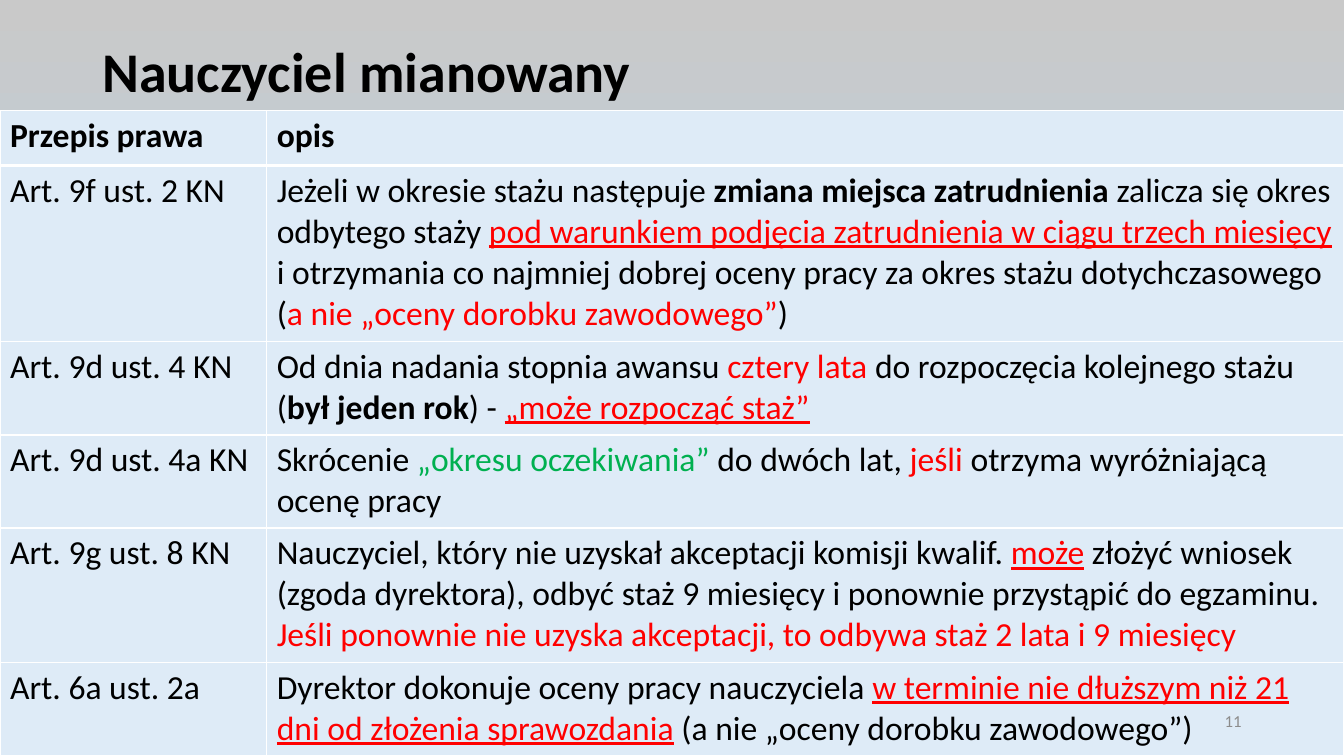
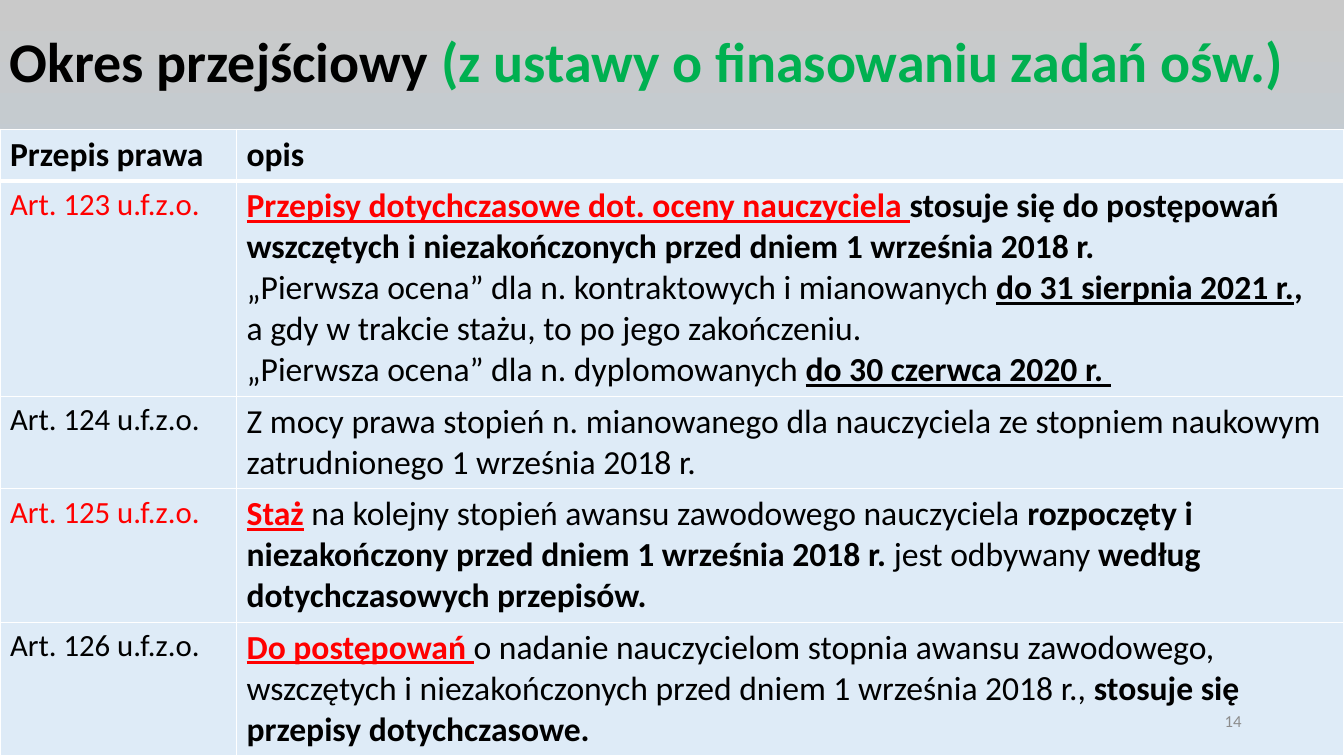
from lxml import etree
from pptx import Presentation
from pptx.dml import color as dml
from pptx.enum import text as t
from pptx.oxml import ns
from pptx.util import Pt

FONT = "Calibri"
COLORS = {"ink": "000000", "red": "FF0000", "green": "00B050",
          "cell": "DEEBF7", "border": "FFFFFF", "number": "8C8C8C"}
BACKGROUND = [(0, "C9C9C9"), (74, "B5D2EC"), (83, "B5D2EC"), (100, "CEE1F2")]
WIDTH, HEIGHT = 960, 540
HEADER = ("Przepis prawa", "opis")

# Content: a run is (text, marks); marks: b bold, u underline, r red, g green.
# A row is (provision, its marks, paragraphs of the description).
SLIDES = [
    {
        "title": [("Nauczyciel mianowany", "b")],
        "title_box": (66, 0, 828, 106.5),
        "number": "11",
        "top": 79.2,
        "first_column": 190.5,
        "provision_size": 24,
        "heights": [39, 125.5, 67, 66.5, 96, 66.8],
        "rows": [
            ("Art. 9f ust. 2 KN", "", [[
                ("Jeżeli w okresie stażu następuje ", ""),
                ("zmiana miejsca zatrudnienia ", "b"),
                ("zalicza się okres odbytego staży ", ""),
                ("pod warunkiem podjęcia zatrudnienia w ciągu trzech miesięcy ", "ru"),
                ("i otrzymania co najmniej dobrej oceny pracy za okres stażu "
                 "dotychczasowego (", ""),
                ("a nie „oceny dorobku zawodowego”", "r"),
                (")", "")]]),
            ("Art. 9d ust. 4 KN", "", [[
                ("Od dnia nadania stopnia awansu ", ""),
                ("cztery lata ", "r"),
                ("do rozpoczęcia kolejnego stażu (", ""),
                ("był jeden rok", "b"),
                (") - ", ""),
                ("„może rozpocząć staż”", "ru")]]),
            ("Art. 9d ust. 4a KN", "", [[
                ("Skrócenie ", ""),
                ("„okresu oczekiwania” ", "g"),
                ("do dwóch lat, ", ""),
                ("jeśli", "r"),
                (" otrzyma wyróżniającą ocenę pracy", "")]]),
            ("Art. 9g ust. 8 KN", "", [
                [("Nauczyciel, który nie uzyskał akceptacji komisji kwalif. ", ""),
                 ("może", "ru"),
                 (" złożyć wniosek (zgoda dyrektora), odbyć staż 9 miesięcy "
                  "i ponownie przystąpić do egzaminu.", "")],
                [("Jeśli ponownie nie uzyska akceptacji, to odbywa staż "
                  "2 lata i 9 miesięcy", "r")]]),
            ("Art. 6a ust. 2a", "", [[
                ("Dyrektor dokonuje oceny pracy nauczyciela ", ""),
                ("w terminie nie dłuższym niż 21 dni od złożenia sprawozdania", "ru"),
                (" (a nie „oceny dorobku zawodowego”)", "")]]),
        ],
    },
    {
        "title": [("Okres przejściowy ", "b"),
                  ("(z ustawy o finasowaniu zadań ośw.)", "bg")],
        "title_box": (0, 0, WIDTH, 92.2),
        "number": "14",
        "top": 92.2,
        "first_column": 169,
        "provision_size": 22,
        "heights": [37, 154, 66, 95.4, 95.4],
        "rows": [
            ("Art. 123 u.f.z.o.", "r", [
                [("Przepisy dotychczasowe dot. oceny nauczyciela ", "bru"),
                 ("stosuje się do postępowań wszczętych i niezakończonych "
                  "przed dniem 1 września 2018 r.", "b")],
                [("„Pierwsza ocena” dla n. kontraktowych i mianowanych ", ""),
                 ("do 31 sierpnia 2021 r.", "bu"),
                 (",", "b")],
                [("a gdy w trakcie stażu, to po jego zakończeniu.", "")],
                [("„Pierwsza ocena” dla n. dyplomowanych ", ""),
                 ("do 30 czerwca 2020 r. ", "bu")]]),
            ("Art. 124 u.f.z.o.", "", [[
                ("Z mocy prawa stopień n. mianowanego dla nauczyciela ze stopniem "
                 "naukowym zatrudnionego 1 września 2018 r.", "")]]),
            ("Art. 125 u.f.z.o.", "r", [[
                ("Staż", "bru"),
                (" na kolejny stopień awansu zawodowego nauczyciela ", ""),
                ("rozpoczęty i niezakończony przed dniem 1 września 2018 r. ", "b"),
                ("jest odbywany ", ""),
                ("według dotychczasowych przepisów.", "b")]]),
            ("Art. 126 u.f.z.o.", "", [[
                ("Do postępowań ", "bru"),
                ("o nadanie nauczycielom stopnia awansu zawodowego, wszczętych "
                 "i niezakończonych przed dniem 1 września 2018 r., ", ""),
                ("stosuje się przepisy dotychczasowe.", "b")]]),
        ],
    },
]


def rgb(name):
    return dml.RGBColor.from_string(COLORS[name])


def child(parent, tag, **attributes):
    return etree.SubElement(parent, ns.qn(tag), attributes)


def write(frame, paragraphs, size, ink="ink"):
    for index, runs in enumerate(paragraphs):
        line = frame.add_paragraph() if index else frame.paragraphs[0]
        for words, marks in runs:
            run = line.add_run()
            run.text = words
            font = run.font
            font.name, font.size = FONT, Pt(size)
            font.bold, font.underline = "b" in marks, "u" in marks
            font.color.rgb = rgb("red" if "r" in marks else
                                 "green" if "g" in marks else ink)


def add_text(slide, box, runs, size, ink="ink"):
    frame = slide.shapes.add_textbox(*map(Pt, box)).text_frame
    frame.word_wrap = True
    frame.vertical_anchor = t.MSO_ANCHOR.MIDDLE
    write(frame, [runs], size, ink)
    return frame.paragraphs[0]


def paint_background(slide):
    fill = slide.background.fill
    fill.gradient()
    fill.gradient_angle = 270  # counter-clockwise, so top to bottom
    stops = fill.gradient_stops[0]._gs.getparent()
    for stop in list(stops):
        stops.remove(stop)
    for percent, shade in BACKGROUND:
        stop = child(stops, "a:gs", pos=str(percent * 1000))
        child(stop, "a:srgbClr", val=shade)


def style_cell(cell, row):
    widths = {"L": 1, "R": 1, "T": 3 if row == 1 else 1, "B": 3 if row == 0 else 1}
    properties = cell._tc.get_or_add_tcPr()
    for side, width in widths.items():
        border = child(properties, f"a:ln{side}", w=str(Pt(width)))
        child(child(border, "a:solidFill"), "a:srgbClr", val=COLORS["border"])
    cell.fill.solid()
    cell.fill.fore_color.rgb = rgb("cell")


def add_provisions(slide, page):
    rows = [(HEADER[0], "b", [[(HEADER[1], "b")]])] + page["rows"]
    table = slide.shapes.add_table(
        len(rows), 2, 0, Pt(page["top"]), Pt(WIDTH), Pt(sum(page["heights"]))).table
    table.first_row = table.horz_banding = False
    table.columns[0].width = Pt(page["first_column"])
    table.columns[1].width = Pt(WIDTH - page["first_column"])
    for index, (provision, marks, description) in enumerate(rows):
        table.rows[index].height = Pt(page["heights"][index])
        left, right = table.cell(index, 0), table.cell(index, 1)
        write(left.text_frame, [[(provision, marks)]],
              page["provision_size"] if index else 24)
        write(right.text_frame, description, 24)
        for cell in (left, right):
            style_cell(cell, index)


def main():
    deck = Presentation()
    deck.slide_width, deck.slide_height = Pt(WIDTH), Pt(HEIGHT)
    for page in SLIDES:
        slide = deck.slides.add_slide(deck.slide_layouts[6])
        paint_background(slide)
        title = add_text(slide, page["title_box"], page["title"], 40)
        title.line_spacing = 0.9
        add_provisions(slide, page)
        number = add_text(slide, (678, 500.5, 216, 28.8),
                          [(page["number"], "")], 12, "number")
        number.alignment = t.PP_ALIGN.RIGHT
    deck.save("out.pptx")


if __name__ == "__main__":
    main()
